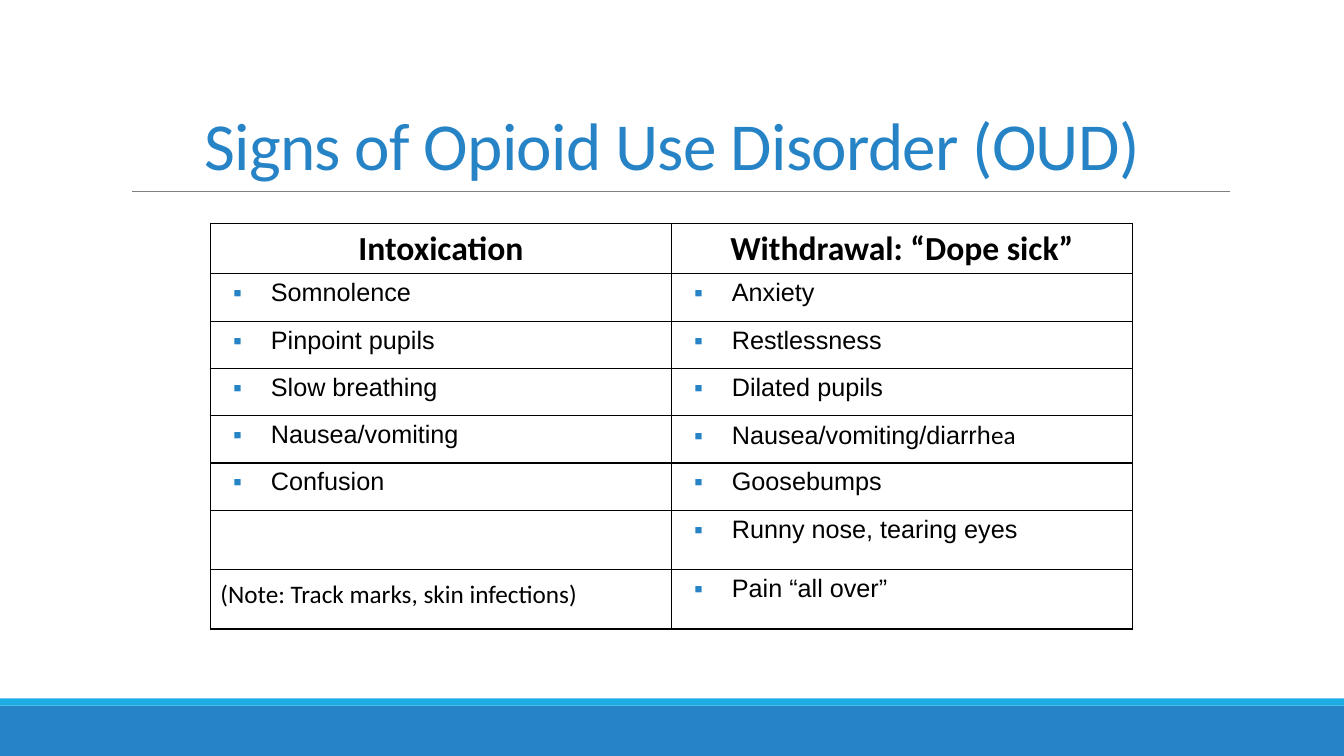
from lxml import etree
from pptx import Presentation
from pptx.dml.color import RGBColor
from pptx.enum.shapes import MSO_CONNECTOR, MSO_SHAPE
from pptx.enum.text import MSO_ANCHOR, PP_ALIGN
from pptx.oxml.ns import qn
from pptx.util import Pt

RECT = MSO_SHAPE.RECTANGLE
STRAIGHT = MSO_CONNECTOR.STRAIGHT
BOTTOM = MSO_ANCHOR.BOTTOM
CENTER = PP_ALIGN.CENTER

BLUE = RGBColor(0x26, 0x83, 0xC6)
CYAN = RGBColor(0x1C, 0xAD, 0xE4)
GRAY = RGBColor(0x80, 0x80, 0x80)
BLACK = RGBColor(0, 0, 0)

HEADERS = ["Intoxication", "Withdrawal: “Dope sick”"]
NOTE = "(Note: Track marks, skin infections)"
INTOXICATION = ["Somnolence", "Pinpoint pupils", "Slow breathing",
                "Nausea/vomiting", "Confusion"]
# Each sign is a list of (text, font) runs or plain text in Arial
WITHDRAWAL = ["Anxiety", "Restlessness", "Dilated pupils",
              [("Nausea/vomiting/diarrh", "Arial"), ("ea", "Calibri")],
              "Goosebumps", "Runny nose, tearing eyes", "Pain “all over”"]
ROW_HEIGHTS = [33.8] * 6 + [42.4] * 2


def add_band(s, top, height, color):
    sp = s.shapes.add_shape(RECT, 0, Pt(top), Pt(960), Pt(height))
    sp.shadow.inherit = False
    sp.fill.solid()
    sp.fill.fore_color.rgb = color
    sp.line.fill.background()


def add_rule(s, left, right, y):
    line = s.shapes.add_connector(STRAIGHT, Pt(left), Pt(y), Pt(right), Pt(y))
    line.line.color.rgb = GRAY
    line.line.width = Pt(0.5)
    etree.SubElement(line._element.spPr, qn("a:effectLst"))


def add_run(p, text, font, size, color=BLACK, bold=False):
    r = p.add_run()
    r.text = text
    r.font.name = font
    r.font.size = Pt(size)
    r.font.bold = bold
    r.font.color.rgb = color
    return r


def add_title(s, text):
    sp = s.shapes.add_textbox(Pt(84), Pt(55.4), Pt(792), Pt(80))
    tf = sp.text_frame
    tf.word_wrap = True
    tf.vertical_anchor = BOTTOM
    p = tf.paragraphs[0]
    p.alignment = CENTER
    p.line_spacing = 0.85
    r = add_run(p, text, "Calibri", 48, BLUE)
    r._r.get_or_add_rPr().set("spc", "-50")


def add_bullet(p):
    pPr = p._p.get_or_add_pPr()
    pPr.set("marL", str(Pt(36)))
    pPr.set("indent", str(Pt(-27)))
    clr = etree.SubElement(pPr, qn("a:buClr"))
    etree.SubElement(clr, qn("a:srgbClr"), val=str(BLUE))
    etree.SubElement(pPr, qn("a:buFont"), typeface="Arial")
    etree.SubElement(pPr, qn("a:buChar"), char="▪")


def style_cell(cell):
    tcPr = cell._tc.get_or_add_tcPr()
    for side in ("a:lnL", "a:lnR", "a:lnT", "a:lnB"):
        ln = etree.SubElement(tcPr, qn(side), w=str(Pt(1)))
        fill = etree.SubElement(ln, qn("a:solidFill"))
        etree.SubElement(fill, qn("a:srgbClr"), val=str(BLACK))
    cell.fill.background()


def fill_sign(cell, sign):
    p = cell.text_frame.paragraphs[0]
    add_bullet(p)
    runs = [(sign, "Arial")] if isinstance(sign, str) else sign
    for text, font in runs:
        add_run(p, text, font, 18)


def add_signs_table(s):
    frame = s.shapes.add_table(len(ROW_HEIGHTS), len(HEADERS), Pt(150.3),
                               Pt(159.6), Pt(658.6), Pt(sum(ROW_HEIGHTS)))
    table = frame.table
    table.horz_banding = False
    for row, height in zip(table.rows, ROW_HEIGHTS):
        row.height = Pt(height)
    for cell in table.iter_cells():
        style_cell(cell)

    for col, (header, signs) in enumerate(zip(HEADERS, (INTOXICATION, WITHDRAWAL))):
        p = table.cell(0, col).text_frame.paragraphs[0]
        p.alignment = CENTER
        add_run(p, header, "Calibri", 24, bold=True)
        for row, sign in enumerate(signs, start=1):
            fill_sign(table.cell(row, col), sign)

    # Note under the intoxication signs
    cell = table.cell(len(ROW_HEIGHTS) - 1, 0)
    cell.margin_top = cell.margin_bottom = Pt(7.2)
    add_run(cell.text_frame.paragraphs[0], NOTE, "Calibri", 18)


def main():
    prs = Presentation()
    prs.slide_width, prs.slide_height = Pt(960), Pt(540)
    s = prs.slides.add_slide(prs.slide_layouts[6])

    # Footer bands
    add_band(s, 504, 36, BLUE)
    add_band(s, 498.8, 5.2, CYAN)

    # Title and rule
    add_rule(s, 94.3, 878.4, 136.6)
    add_title(s, "Signs of Opioid Use Disorder (OUD)")

    # Signs by state
    add_signs_table(s)

    prs.save("out.pptx")


if __name__ == "__main__":
    main()
